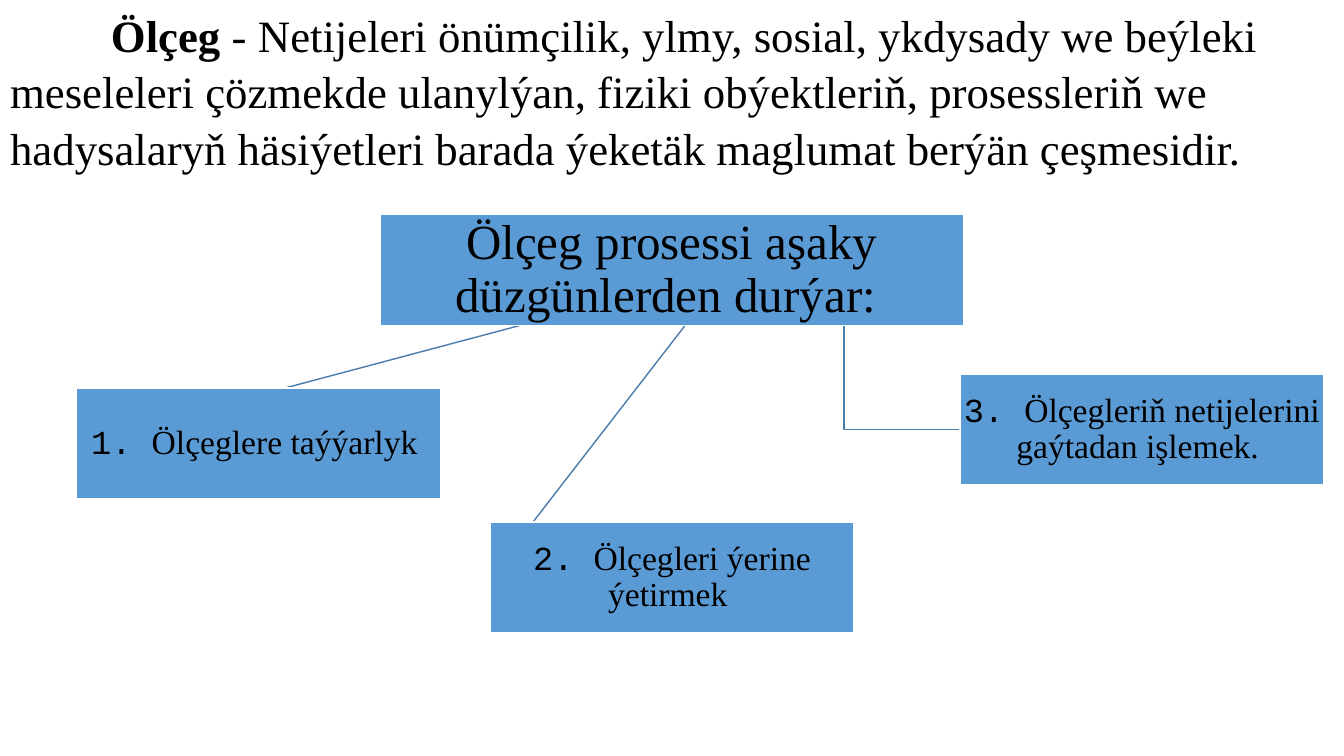
from lxml import etree
from pptx import Presentation
from pptx import util as u
from pptx.dml.color import RGBColor
from pptx.enum import shapes, text
from pptx.oxml.ns import qn

WIDTH, HEIGHT = u.Inches(13.33), u.Inches(7.5)
SERIF, MONO = "Times New Roman", "Courier New"
BLUE, LINE_BLUE, WHITE, BLACK = "5B9BD5", "497CAB", "FFFFFF", "000000"
ROOT_LEFT, ROOT_TOP, ROOT_WIDTH = 28.28, 28.4, 43.44
STEP_WIDTH, BOX_HEIGHT = 27.08, 14.67
HUB = (54.16, ROOT_TOP + BOX_HEIGHT / 2)
STRAIGHT, ELBOW = shapes.MSO_CONNECTOR.STRAIGHT, shapes.MSO_CONNECTOR.ELBOW
STEPS = [
    (71.42, 49.47, ELBOW, "3. ", "Ölçegleriň netijelerini gaýtadan işlemek. "),
    (36.46, 69.07, STRAIGHT, "2. ", "Ölçegleri ýerine ýetirmek "),
    (5.7, 51.33, STRAIGHT, "1. ", "Ölçeglere taýýarlyk "),
]


def across(percent):
    return u.Emu(round(WIDTH * percent / 100))


def down(percent):
    return u.Emu(round(HEIGHT * percent / 100))


def color(code):
    return RGBColor.from_string(code)


def add_span(para, words, size=24, font=SERIF, bold=False, ink=BLACK):
    span = para.add_run()
    span.text = words
    span.font.size = u.Pt(size)
    span.font.name = font
    span.font.bold = bold
    span.font.color.rgb = color(ink)


def set_frame(frame, anchor, side, edge):
    frame.word_wrap = True
    frame.auto_size = text.MSO_AUTO_SIZE.NONE
    frame.vertical_anchor = anchor
    frame.margin_left = frame.margin_right = u.Inches(side)
    frame.margin_top = frame.margin_bottom = u.Inches(edge)


def add_definition(page):
    title = page.shapes.title
    title.left, title.top, title.width, title.height = 0, 0, WIDTH, down(30.13)
    set_frame(title.text_frame, text.MSO_ANCHOR.TOP, 0.1, 0.05)
    para = title.text_frame.paragraphs[0]
    para.alignment = text.PP_ALIGN.LEFT
    para.line_spacing = 1.05
    para._p.get_or_add_pPr().set("indent", str(u.Inches(1)))
    add_span(para, "Ölçeg ", size=32, bold=True)
    add_span(para, "- Netijeleri önümçilik, ylmy, sosial, ykdysady we beýleki "
             "meseleleri çözmekde ulanylýan, fiziki obýektleriň, prosessleriň we "
             "hadysalaryň häsiýetleri barada ýeketäk maglumat berýän çeşmesidir.", size=32)


def add_link(page, kind, left, top):
    end = (across(left), down(top + BOX_HEIGHT / 2))
    link = page.shapes.add_connector(kind, across(HUB[0]), down(HUB[1]), *end)
    link.line.color.rgb = color(LINE_BLUE)
    link.line.width = u.Pt(1)
    etree.SubElement(link._element.spPr, qn("a:effectLst"))


def add_box(page, left, top, width):
    box = page.shapes.add_shape(shapes.MSO_SHAPE.RECTANGLE, across(left), down(top),
                                across(width), down(BOX_HEIGHT))
    box.shadow.inherit = False
    box.fill.solid()
    box.fill.fore_color.rgb = color(BLUE)
    box.line.color.rgb = color(WHITE)
    box.line.width = u.Pt(1)
    set_frame(box.text_frame, text.MSO_ANCHOR.MIDDLE, 0.02, 0.02)
    para = box.text_frame.paragraphs[0]
    para.alignment = text.PP_ALIGN.CENTER
    para.line_spacing = 0.9
    return para


def main():
    deck = Presentation()
    deck.slide_width, deck.slide_height = WIDTH, HEIGHT
    page = deck.slides.add_slide(deck.slide_layouts.get_by_name("Title Only"))
    add_definition(page)
    for left, top, kind, _, _ in STEPS:
        add_link(page, kind, left, top)
    root = add_box(page, ROOT_LEFT, ROOT_TOP, ROOT_WIDTH)
    add_span(root, "Ölçeg prosessi aşaky düzgünlerden durýar: ", size=35)
    for left, top, _, number, words in reversed(STEPS):
        para = add_box(page, left, top, STEP_WIDTH)
        add_span(para, number, font=MONO)
        add_span(para, words)
    deck.save("out.pptx")


if __name__ == "__main__":
    main()
